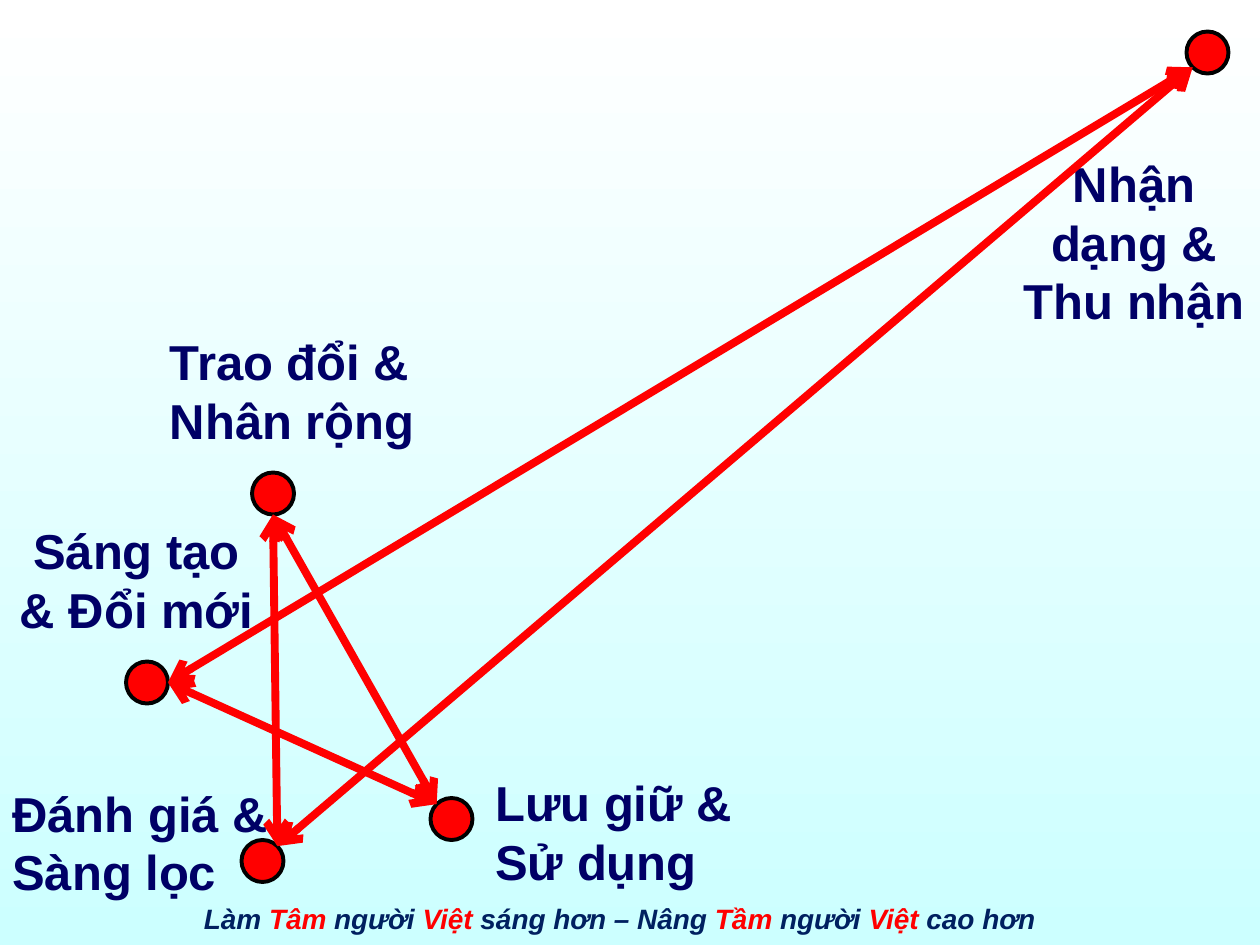
from math import cos, radians, sin

from lxml import etree
from pptx import Presentation
from pptx.dml.color import RGBColor
from pptx.enum.shapes import MSO_CONNECTOR, MSO_SHAPE
from pptx.enum.text import PP_ALIGN
from pptx.oxml.ns import qn
from pptx.util import Inches, Pt

COLUMNS, ROWS = 120, 90  # grid of twelfths of an inch
RED, NAVY, FOOTER_BLUE = "FF0000", "000066", "002060"
DOT = 4  # dot diameter in grid units


def color(value):
    return RGBColor.from_string(value)


class StarSlide:
    font = "Arial"

    def __init__(self, deck):
        self.slide = deck.slides.add_slide(deck.slide_layouts[6])
        self.unit_x = deck.slide_width / COLUMNS
        self.unit_y = deck.slide_height / ROWS

    def place(self, column, row):
        return round(column * self.unit_x), round(row * self.unit_y)

    def background(self, top, bottom):
        fill = self.slide.background.fill
        fill.gradient()
        fill.gradient_angle = 270
        for stop, value, position in zip(fill.gradient_stops, (top, bottom), (0, 1)):
            stop.color.rgb = color(value)
            stop.position = position

    def text(self, area, spans, size, align=PP_ALIGN.LEFT, italic=False):
        box = self.slide.shapes.add_textbox(*self.place(*area[:2]), *self.place(*area[2:]))
        box.text_frame.word_wrap = True
        para = box.text_frame.paragraphs[0]
        para.text = "".join(words for words, _ in spans) if len(spans) == 1 else ""
        para.alignment = align
        if not para.runs:
            for words, _ in spans:
                para.add_run().text = words
        values = [value for _, value in spans]
        for index, span in enumerate(para.runs):
            font = span.font
            font.name, font.size = self.font, Pt(size)
            font.bold, font.italic = True, italic
            font.color.rgb = color(values[min(index, len(values) - 1)])

    def dot(self, column, row):
        shape = self.slide.shapes.add_shape(
            MSO_SHAPE.OVAL, *self.place(column, row), *self.place(DOT, DOT))
        shape.shadow.inherit = False
        shape.fill.solid()
        shape.fill.fore_color.rgb = color(RED)
        shape.line.color.rgb = color("000000")
        shape.line.width = Pt(2.25)

    def arrow(self, start, end):
        connector = self.slide.shapes.add_connector(
            MSO_CONNECTOR.STRAIGHT, *self.place(*start), *self.place(*end))
        connector.line.color.rgb = color(RED)
        connector.line.width = Pt(4.5)
        line = connector.line._get_or_add_ln()
        for tag in ("a:headEnd", "a:tailEnd"):
            etree.SubElement(line, qn(tag), type="arrow")
        etree.SubElement(connector._element.spPr, qn("a:effectLst"))


def rim(column, row, angle):
    """Point on a dot's rim; the angle runs clockwise from the right."""
    radius = DOT / 2
    turn = radians(angle)
    return column + radius * (1 + cos(turn)), row + radius * (1 + sin(turn))


def main():
    deck = Presentation()
    deck.slide_width, deck.slide_height = Inches(10), Inches(7.5)
    page = StarSlide(deck)
    page.background("FFFFFF", "CCFFFF")

    # Footer motto
    motto = [("Làm ", FOOTER_BLUE), ("Tâm ", RED), ("người ", FOOTER_BLUE), ("Việt", RED),
             (" sáng hơn – Nâng ", FOOTER_BLUE), ("Tầm", RED), (" người ", FOOTER_BLUE),
             ("Việt", RED), (" cao hơn", FOOTER_BLUE)]
    page.text((6, 85.3, 106, 4.4), motto, 16, PP_ALIGN.CENTER, italic=True)

    # Dots: column, row and the rim angle where arrows meet
    dots = {
        "share": (24, 45, 90),
        "acquire": (113, 3, 135),
        "store": (41, 76, 225),
        "assess": (23, 80, 315),
        "create": (12, 63, 0),
    }
    for column, row, _ in dots.values():
        page.dot(column, row)

    # Labels
    labels = [
        ("Sáng tạo & Đổi mới", (0, 49, 26, 12.5), PP_ALIGN.CENTER),
        ("Trao đổi & Nhân rộng", (15, 31, 30, 12.5), PP_ALIGN.LEFT),
        ("Nhận dạng & Thu nhận", (96, 14, 24, 18.1), PP_ALIGN.CENTER),
        ("Lưu giữ & \vSử dụng", (46, 73, 35, 12.5), PP_ALIGN.LEFT),
        ("Đánh giá & Sàng lọc", (0, 74, 31, 12.5), PP_ALIGN.LEFT),
    ]
    for words, area, align in labels:
        page.text(area, [(words, NAVY)], 28, align)

    # Star arrows
    for start, end in [("create", "acquire"), ("create", "store"), ("assess", "acquire"),
                       ("assess", "share"), ("share", "store")]:
        page.arrow(rim(*dots[start]), rim(*dots[end]))

    deck.save("out.pptx")


if __name__ == "__main__":
    main()
